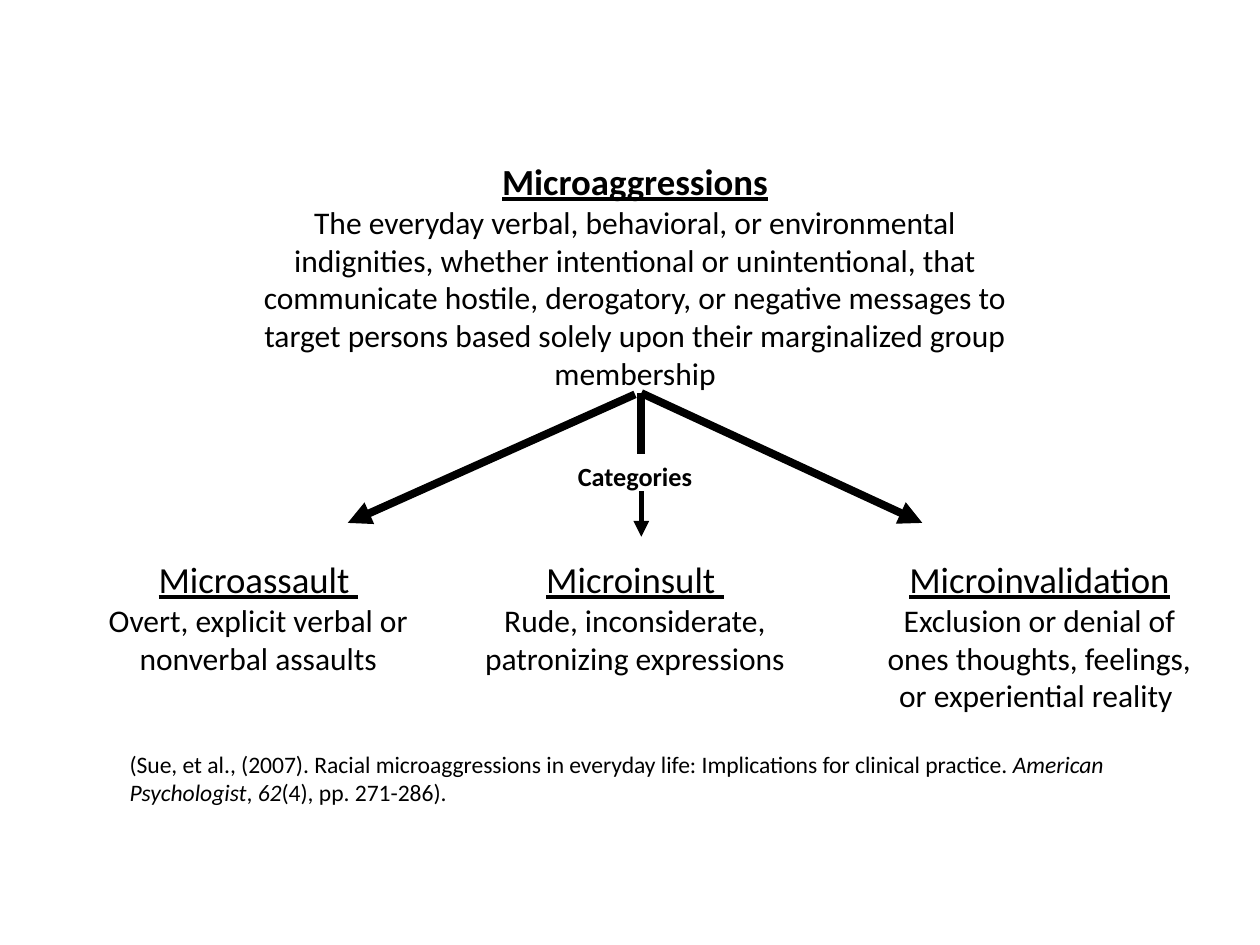
from pptx import Presentation, util as u
from pptx.dml.color import RGBColor
from pptx.enum import shapes, text
from pptx.oxml.ns import qn
from lxml import etree

COLORS = {"ink": "000000", "paper": "FFFFFF"}
FONT = "Calibri"
CATEGORIES = [
    ("Microassault ", "Overt, explicit verbal or nonverbal assaults", (0.23, 4.37, 3.64, 1.06)),
    ("Microinsult ", "Rude, inconsiderate, patronizing expressions", (3.56, 4.37, 2.96, 1.06)),
    ("Microinvalidation", "Exclusion or denial of ones thoughts, feelings, or experiential reality ",
     (6.81, 4.37, 2.88, 1.36)),
]
DEFINITION = (
    "The everyday verbal, behavioral, or environmental indignities, whether intentional "
    "or unintentional, that communicate hostile, derogatory, or negative messages to "
    "target persons based solely upon their marginalized group membership"
)
CITATION = [
    ("(Sue, et al., (2007). Racial microaggressions in everyday life: "
     "Implications for clinical practice. ", False),
    ("American Psychologist", True), (", ", False), ("62", True), ("(4), pp. 271-286).", False),
]
HUB = (5.09, 3.12)
ARROWS = [
    ((5.04, 3.13), (2.76, 4.15), 4.5, True),
    (HUB, (7.32, 4.15), 4.5, True),
    (HUB, (5.09, 3.6), 4.5, False),
    ((5.09, 3.9), (5.09, 4.26), 3, True),
]


def style_run(run, size, bold=False, underline=False, italic=False):
    """Format one run in the slide's font and ink colour."""
    font = run.font
    font.name, font.size = FONT, u.Pt(size)
    font.bold, font.underline, font.italic = bold, underline, italic
    font.color.rgb = RGBColor.from_string(COLORS["ink"])


def add_box(slide, box):
    """Add a wrapping text box and return its text frame."""
    frame = slide.shapes.add_textbox(*map(u.Inches, box)).text_frame
    frame.word_wrap = True
    return frame


def fill_term(frame, term, meaning, bold=False):
    """Write an underlined term with its meaning centred below."""
    frame.text = f"{term}\n{meaning}"
    for paragraph in frame.paragraphs:
        paragraph.alignment = text.PP_ALIGN.CENTER
    heading, body = frame.paragraphs
    style_run(heading.runs[0], 21, bold=bold, underline=True)
    style_run(body.runs[0], 18)


def place_definition(slide, box):
    """Move the title placeholder to the box and fill in the definition."""
    title = slide.shapes.title
    title.left, title.top, title.width, title.height = map(u.Inches, box)
    frame = title.text_frame
    frame.word_wrap = True
    frame.auto_size = text.MSO_AUTO_SIZE.NONE
    frame.vertical_anchor = text.MSO_ANCHOR.TOP
    fill_term(frame, "Microaggressions", DEFINITION, bold=True)


def place_label(slide, box):
    """Add the label between the two middle lines."""
    paragraph = add_box(slide, box).paragraphs[0]
    paragraph.text = "Categories"
    paragraph.alignment = text.PP_ALIGN.CENTER
    style_run(paragraph.runs[0], 15, bold=True)


def place_citation(slide, box):
    """Add the reference with its italic parts."""
    paragraph = add_box(slide, box).paragraphs[0]
    for words, italic in CITATION:
        run = paragraph.add_run()
        run.text = words
        style_run(run, 13.5, italic=italic)


def add_arrow(slide, start, end, width, has_head):
    """Draw a straight line, with a triangle at its end if wanted."""
    arrow = slide.shapes.add_connector(
        shapes.MSO_CONNECTOR.STRAIGHT, *map(u.Inches, start + end))
    arrow.line.width = u.Pt(width)
    arrow.line.color.rgb = RGBColor.from_string(COLORS["ink"])
    if has_head:
        etree.SubElement(arrow.line._get_or_add_ln(), qn("a:tailEnd"), type="triangle")
    etree.SubElement(arrow._element.spPr, qn("a:effectLst"))


def main():
    """Build the slide and save it."""
    deck = Presentation()
    deck.slide_width, deck.slide_height = u.Inches(10), u.Inches(7.5)
    slide = deck.slides.add_slide(deck.slide_layouts[5])
    background = slide.background.fill
    background.solid()
    background.fore_color.rgb = RGBColor.from_string(COLORS["paper"])
    place_definition(slide, (1.99, 1.21, 6.1, 1.97))
    for term, meaning, box in CATEGORIES:
        fill_term(add_box(slide, box), term, meaning)
    for arrow in ARROWS:
        add_arrow(slide, *arrow)
    place_label(slide, (3.87, 3.6, 2.34, 0.35))
    place_citation(slide, (0.93, 5.9, 8.33, 0.56))
    deck.save("out.pptx")


if __name__ == "__main__":
    main()
